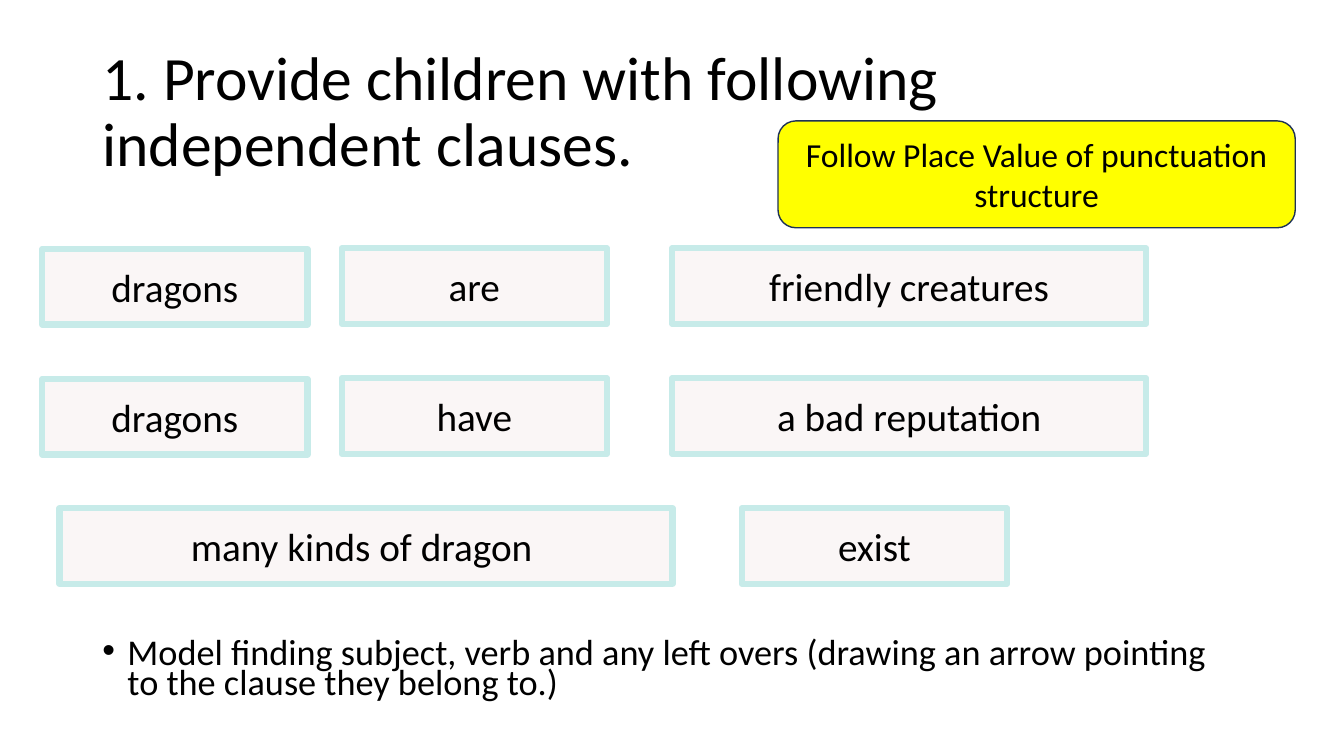
from lxml import etree
from pptx import Presentation
from pptx.dml.color import RGBColor
from pptx.enum.shapes import MSO_SHAPE
from pptx.enum.text import MSO_ANCHOR, PP_ALIGN
from pptx.oxml.ns import qn
from pptx.util import Pt

RECTANGLE, ROUNDED = MSO_SHAPE.RECTANGLE, MSO_SHAPE.ROUNDED_RECTANGLE
MIDDLE, TOP = MSO_ANCHOR.MIDDLE, MSO_ANCHOR.TOP
CENTER, LEFT = PP_ALIGN.CENTER, PP_ALIGN.LEFT
FONT = "Calibri"
CARD_HEIGHT = 54
CLAUSES = [
    (177.3, [(30.2, 189.4, "dragons", 0.6), (244.1, 189.4, "are", 0),
             (480.2, 338.4, "friendly creatures", 0)]),
    (270.1, [(30.2, 189.4, "dragons", 0.6), (244.1, 189.4, "have", 0),
             (480.2, 338.4, "a bad reputation", 0)]),
    (363, [(42.5, 437.8, "many kinds of dragon ", 0), (529.9, 189.4, "exist", 0)]),
]


def color(hex_code):
    """Turn a hex string into a colour."""
    return RGBColor.from_string(hex_code)


def write(frame, text, size, align, anchor=MIDDLE):
    """Fill a text frame with one black paragraph and return it."""
    frame.word_wrap = True
    frame.vertical_anchor = anchor
    paragraph = frame.paragraphs[0]
    paragraph.text = text
    paragraph.alignment = align
    paragraph.font.size = Pt(size)
    paragraph.font.name = FONT
    paragraph.font.color.rgb = color("000000")
    return paragraph


def add_card(slide, box, text, size, fill, border, weight, kind=RECTANGLE):
    """Add a filled, outlined card with centred text."""
    card = slide.shapes.add_shape(kind, *map(Pt, box))
    card.shadow.inherit = False
    card.fill.solid()
    card.fill.fore_color.rgb = color(fill)
    card.line.color.rgb = color(border)
    card.line.width = Pt(weight)
    write(card.text_frame, text, size, CENTER)


def add_title(slide, box, text):
    """Place and format the title placeholder."""
    title = slide.shapes.title
    title.left, title.top, title.width, title.height = map(Pt, box)
    write(title.text_frame, text, 44, LEFT).line_spacing = 0.9


def add_clauses(slide, clauses):
    """Lay out each clause as a row of word cards."""
    for top, words in clauses:
        for left, width, text, drop in words:
            add_card(slide, (left, top + drop, width, CARD_HEIGHT), text,
                     28, "FAF6F6", "C7EBE9", 4.5)


def add_instruction(slide, box, text):
    """Add the bulleted teaching instruction."""
    frame = slide.shapes.add_textbox(*map(Pt, box)).text_frame
    properties = frame.paragraphs[0]._p.get_or_add_pPr()
    properties.set("marL", str(Pt(18)))
    properties.set("indent", str(-Pt(18)))
    etree.SubElement(properties, qn("a:buFont")).set("typeface", "Arial")
    etree.SubElement(properties, qn("a:buChar")).set("char", "•")
    write(frame, text, 25.9, LEFT, TOP).line_spacing = 0.7


def main():
    """Build the slide and save it."""
    deck = Presentation()
    deck.slide_width, deck.slide_height = Pt(960), Pt(540)
    slide = deck.slides.add_slide(deck.slide_layouts[5])
    add_title(slide, (66, 28.8, 828, 104.4),
              "1. Provide children with following independent clauses.")
    add_instruction(slide, (66, 454.3, 828, 54),
                    "Model finding subject, verb and any left overs "
                    "(drawing an arrow pointing to the clause they belong to.)")
    add_clauses(slide, CLAUSES)
    add_card(slide, (555.8, 86.4, 369.4, 76.3),
             "Follow Place Value of punctuation structure",
             24, "FFFF00", "1E3256", 1, ROUNDED)
    deck.save("out.pptx")


if __name__ == "__main__":
    main()
